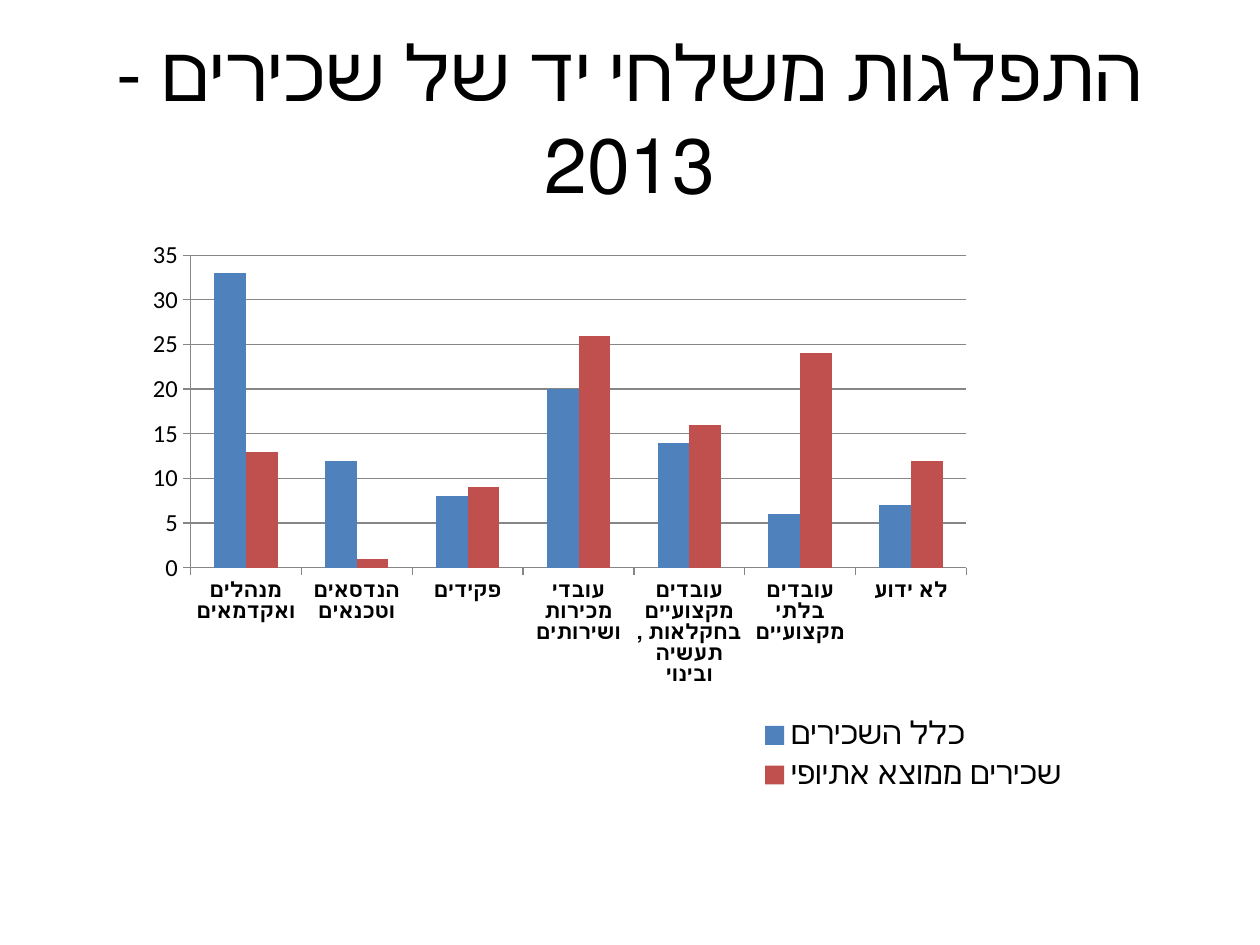
from lxml.etree import SubElement
from pptx import Presentation
from pptx.chart.data import CategoryChartData
from pptx.dml.color import RGBColor
from pptx.enum.chart import XL_CHART_TYPE, XL_LEGEND_POSITION, XL_TICK_MARK
from pptx.enum.text import MSO_ANCHOR, PP_ALIGN
from pptx.oxml.ns import qn
from pptx.util import Emu, Pt

PX_PER_INCH = 126
FONT = "Calibri"
BLACK, GREY = "000000", "868686"

OCCUPATIONS = [
    "מנהלים ואקדמאים",
    "הנדסאים וטכנאים",
    "פקידים",
    "עובדי מכירות ושירותים",
    "עובדים מקצועיים בחקלאות , תעשיה ובינוי",
    "עובדים בלתי מקצועיים",
    "לא ידוע",
]
# Name, colour, percentage per occupation
EMPLOYEE_GROUPS = [
    ("כלל השכירים", "4F81BD", [33, 12, 8, 20, 14, 6, 7]),
    ("שכירים ממוצא אתיופי", "C0504D", [13, 1, 9, 26, 16, 24, 12]),
]


def px(length):
    return Emu(round(length * 914400 / PX_PER_INCH))


def color(hex_value):
    return RGBColor.from_string(hex_value)


def style_font(font, size, bold=False):
    font.name = FONT
    font.size = Pt(size)
    font.bold = bold
    font.color.rgb = color(BLACK)


def set_layout(element, box, inner=False):
    """Place a chart part by fractions of the chart's width and height."""
    layout = element.find(qn("c:layout"))
    if layout is None:
        layout = SubElement(element, qn("c:layout"))
        # The layout follows the legend position, or opens the plot area
        position = element.find(qn("c:legendPos"))
        if position is not None:
            position.addnext(layout)
        else:
            element.insert(0, layout)
    for child in list(layout):
        layout.remove(child)
    manual = SubElement(layout, qn("c:manualLayout"))
    settings = [("layoutTarget", "inner")] if inner else []
    settings += [("xMode", "edge"), ("yMode", "edge")]
    settings += zip("xywh", box)
    for tag, value in settings:
        SubElement(manual, qn(f"c:{tag}")).set("val", str(value))


def style_axis(axis, size, bold=False):
    style_font(axis.tick_labels.font, size, bold)
    axis.major_tick_mark = XL_TICK_MARK.OUTSIDE
    axis.minor_tick_mark = XL_TICK_MARK.NONE
    axis.format.line.color.rgb = color(GREY)


def add_title(slide, left, top, width, height):
    title = slide.shapes.title
    title.left, title.top = px(left), px(top)
    title.width, title.height = px(width), px(height)
    title.text_frame.text = "התפלגות משלחי יד של שכירים - 2013"
    title.text_frame.vertical_anchor = MSO_ANCHOR.MIDDLE
    heading = title.text_frame.paragraphs[0]
    heading.alignment = PP_ALIGN.CENTER
    heading._p.get_or_add_pPr().set("rtl", "1")
    style_font(heading.runs[0].font, 44)


def add_occupation_chart(slide, left, top, width, height):
    data = CategoryChartData(number_format="General")
    data.categories = OCCUPATIONS
    for name, _, shares in EMPLOYEE_GROUPS:
        data.add_series(name, shares)
    chart = slide.shapes.add_chart(
        XL_CHART_TYPE.COLUMN_CLUSTERED,
        px(left), px(top), px(width), px(height), data,
    ).chart
    chart.has_title = False
    style_font(chart.font, 18)

    # Columns
    plot = chart.plots[0]
    plot.gap_width = 150
    plot.overlap = 0
    plot.vary_by_categories = False
    for series, (_, fill, _) in zip(plot.series, EMPLOYEE_GROUPS):
        series.format.fill.solid()
        series.format.fill.fore_color.rgb = color(fill)
    plot_area = chart._chartSpace.chart.plotArea
    set_layout(plot_area, (0.12, 0.05, 0.73, 0.5), inner=True)

    # Axes
    style_axis(chart.category_axis, 12, bold=True)
    shares_axis = chart.value_axis
    style_axis(shares_axis, 14)
    shares_axis.minimum_scale, shares_axis.maximum_scale = 0, 35
    shares_axis.major_unit = 5
    shares_axis.has_major_gridlines = True
    shares_axis.major_gridlines.format.line.color.rgb = color(GREY)

    # Legend
    chart.has_legend = True
    legend = chart.legend
    legend.position = XL_LEGEND_POSITION.RIGHT
    legend.include_in_layout = False
    style_font(legend.font, 18)
    set_layout(legend._element, (0.65, 0.78, 0.3, 0.14))


def main():
    presentation = Presentation()
    presentation.slide_width = px(1260)
    presentation.slide_height = px(945)
    slide = presentation.slides.add_slide(presentation.slide_layouts[5])
    add_title(slide, 63, 38, 1134, 157)
    add_occupation_chart(slide, 63, 224, 1063, 625)
    presentation.save("out.pptx")


if __name__ == "__main__":
    main()
